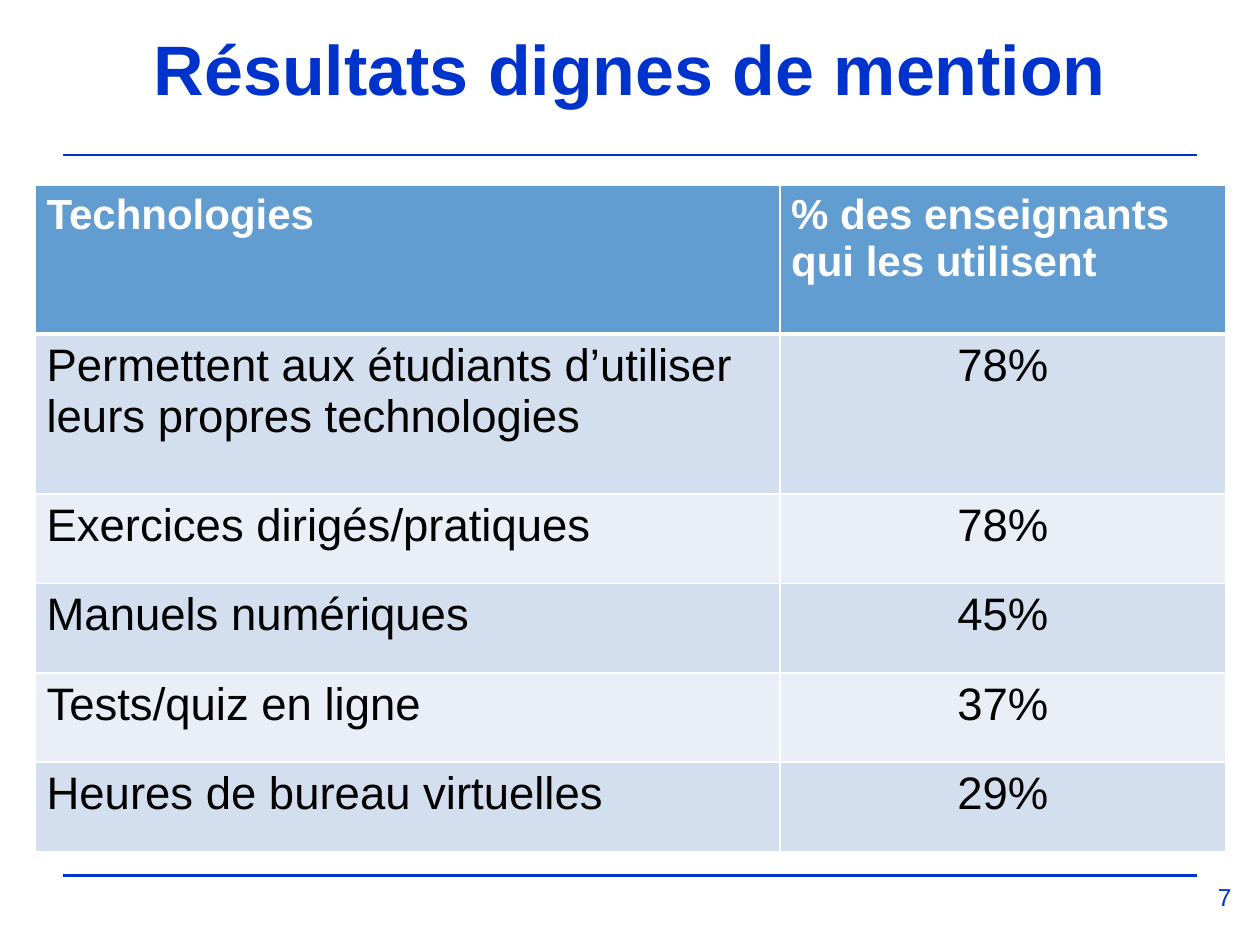
from lxml import etree
from pptx import Presentation
from pptx import util as u
from pptx.dml.color import RGBColor
from pptx.enum import shapes, text
from pptx.oxml.ns import qn

BLUE = RGBColor(0x00, 0x33, 0xCC)
HEADER = RGBColor(0x62, 0x9D, 0xD1)
BANDS = [RGBColor(0xEA, 0xEF, 0xF7), RGBColor(0xD3, 0xDF, 0xEE)]
WHITE = RGBColor(0xFF, 0xFF, 0xFF)
BLACK = RGBColor(0x00, 0x00, 0x00)

ROWS = [
    ("Technologies", "% des enseignants qui les utilisent"),
    ("Permettent aux étudiants d’utiliser leurs propres technologies", "78%"),
    ("Exercices dirigés/pratiques", "78%"),
    ("Manuels numériques", "45%"),
    ("Tests/quiz en ligne", "37%"),
    ("Heures de bureau virtuelles", "29%"),
]
COLUMN_WIDTHS = [5.91, 3.54]
ROW_HEIGHTS = [1.18, 1.27] + [0.71] * 4


def write(paragraph, words, size, color, bold=False, align=text.PP_ALIGN.LEFT):
    paragraph.alignment = align
    run = paragraph.add_run()
    run.text = words
    run.font.name = "Arial"
    run.font.size = u.Pt(size)
    run.font.bold = bold
    run.font.color.rgb = color


def add_border(cell, side, points):
    line = etree.SubElement(cell._tc.get_or_add_tcPr(), qn(f"a:ln{side}"), w=str(u.Pt(points)))
    fill = etree.SubElement(line, qn("a:solidFill"))
    etree.SubElement(fill, qn("a:srgbClr"), val=str(WHITE))


presentation = Presentation()
presentation.slide_width = u.Inches(10)
presentation.slide_height = u.Inches(7.5)
slide = presentation.slides.add_slide(presentation.slide_layouts[5])
margin = u.Inches(0.5)
right = presentation.slide_width - margin

for height in (1.23, 6.95):
    y = u.Inches(height)
    rule = slide.shapes.add_connector(shapes.MSO_CONNECTOR.STRAIGHT, margin, y, right, y)
    rule.line.color.rgb = BLUE
    rule.line.width = u.Pt(1.5)
    etree.SubElement(rule._element.spPr, qn("a:effectLst"))

title = slide.shapes.title
title.left, title.top = margin, u.Inches(0.17)
title.width, title.height = right - margin, u.Inches(0.75)
title.text_frame.auto_size = text.MSO_AUTO_SIZE.NONE
title.text_frame.vertical_anchor = text.MSO_ANCHOR.BOTTOM
write(title.text_frame.paragraphs[0], "Résultats dignes de mention", 40, BLUE, True, text.PP_ALIGN.CENTER)

table = slide.shapes.add_table(
    len(ROWS), len(COLUMN_WIDTHS), u.Inches(0.28), u.Inches(1.47),
    u.Inches(sum(COLUMN_WIDTHS)), u.Inches(sum(ROW_HEIGHTS)),
).table
for column, width in zip(table.columns, COLUMN_WIDTHS):
    column.width = u.Inches(width)
for row, height in zip(table.rows, ROW_HEIGHTS):
    row.height = u.Inches(height)

for row_index, row in enumerate(ROWS):
    is_header = row_index == 0
    for column_index, words in enumerate(row):
        cell = table.cell(row_index, column_index)
        cell.margin_left = cell.margin_right = u.Inches(0.09)
        cell.margin_top = cell.margin_bottom = u.Inches(0.05)
        for side in "LRTB":
            heavy = (is_header and side == "B") or (row_index == 1 and side == "T")
            add_border(cell, side, 3 if heavy else 1)
        cell.fill.solid()
        cell.fill.fore_color.rgb = HEADER if is_header else BANDS[row_index % 2]
        paragraph = cell.text_frame.paragraphs[0]
        if is_header:
            write(paragraph, words, 24, WHITE, True)
        else:
            align = text.PP_ALIGN.CENTER if column_index else text.PP_ALIGN.LEFT
            write(paragraph, words, 26, BLACK, False, align)

number = slide.shapes.add_textbox(u.Inches(9.44), u.Inches(6.95), u.Inches(0.56), u.Inches(0.42))
number.text_frame.word_wrap = True
write(number.text_frame.paragraphs[0], "7", 14, BLUE, False, text.PP_ALIGN.CENTER)

presentation.save("out.pptx")
